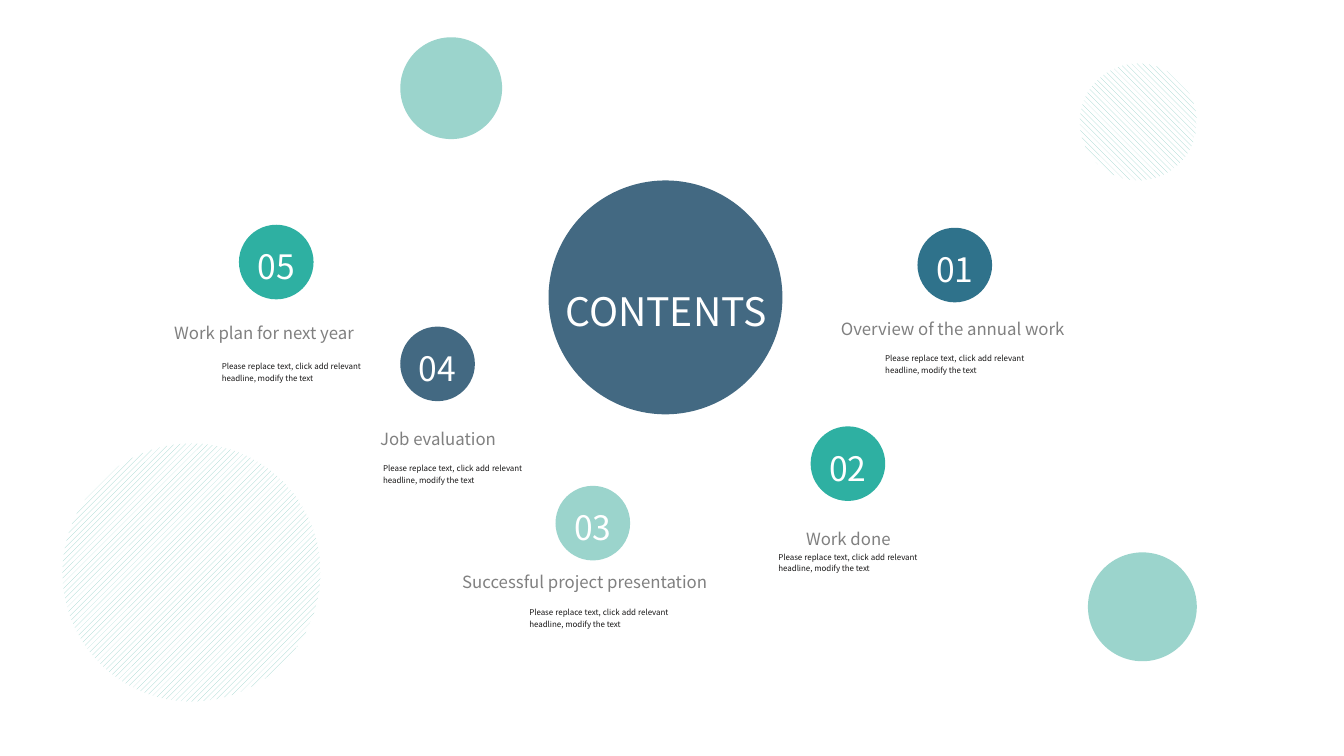
from pptx import Presentation
from pptx.dml.color import RGBColor
from pptx.enum.dml import MSO_PATTERN
from pptx.enum.shapes import MSO_SHAPE
from pptx.enum.text import MSO_ANCHOR, MSO_AUTO_SIZE, PP_ALIGN
from pptx.util import Inches, Pt

OVAL = MSO_SHAPE.OVAL
RISING = MSO_PATTERN.WIDE_UPWARD_DIAGONAL
FALLING = MSO_PATTERN.WIDE_DOWNWARD_DIAGONAL
TOP, MIDDLE = MSO_ANCHOR.TOP, MSO_ANCHOR.MIDDLE
CENTER, JUSTIFY = PP_ALIGN.CENTER, PP_ALIGN.JUSTIFY
GROW = MSO_AUTO_SIZE.SHAPE_TO_FIT_TEXT

NAVY = RGBColor(0x43, 0x69, 0x82)
BLUE = RGBColor(0x2F, 0x72, 0x8B)
TEAL = RGBColor(0x2E, 0xB0, 0xA2)
MINT = RGBColor(0x9B, 0xD4, 0xCC)
WHITE = RGBColor(0xFF, 0xFF, 0xFF)
GRAY = RGBColor(0x80, 0x80, 0x80)
INK = RGBColor(0x18, 0x17, 0x17)
FONT = "Noto Sans CJK SC"

# Content: lengths in inches
TITLE = "CONTENTS"
NOTE = "Please replace text, click add relevant headline, modify the text"
BADGE = 0.74
NOTE_SIZE = (1.38, 0.22)
HEADING_HEIGHT = 0.24
# number, colour, badge corner, heading, (left, top, width), note corner
TOPICS = [
    ("01", BLUE, (9.1, 2.26), "Overview of the annual work", (8.19, 3.12, 2.52), (8.78, 3.49)),
    ("02", TEAL, (8.04, 4.23), "Work done", (7.81, 5.21, 1.21), (7.72, 5.46)),
    ("03", MINT, (5.51, 4.82), "Successful project presentation", (4.49, 5.63, 2.62), (5.25, 6.01)),
    ("04", NAVY, (3.97, 3.24), "Job evaluation", (3.74, 4.21, 1.21), (3.8, 4.58)),
    ("05", TEAL, (2.37, 2.23), "Work plan for next year", (1.51, 3.16, 2.22), (2.2, 3.57)),
]
# left, top, diameter, hatching
BUBBLES = [
    (10.79, 5.48, 1.08, None),
    (3.97, 0.37, 1.01, None),
    (0.62, 4.4, 2.56, RISING),
    (10.71, 0.63, 1.16, FALLING),
]

deck = Presentation()
deck.slide_width, deck.slide_height = Inches(13.33), Inches(7.5)
page = deck.slides.add_slide(deck.slide_layouts[6])


def add_circle(left, top, diameter, color, hatching=None):
    circle = page.shapes.add_shape(
        OVAL, Inches(left), Inches(top), Inches(diameter), Inches(diameter))
    circle.shadow.inherit = False
    circle.line.fill.background()
    if hatching is None:
        circle.fill.solid()
        circle.fill.fore_color.rgb = color
    else:
        circle.fill.patterned()
        circle.fill.pattern = hatching
        circle.fill.fore_color.rgb = color
        circle.fill.back_color.rgb = WHITE
    return circle


def write(shape, text, size, color, align=CENTER, anchor=MIDDLE, wrap=True, spacing=1.2):
    frame = shape.text_frame
    frame.margin_left = frame.margin_right = frame.margin_top = frame.margin_bottom = 0
    frame.word_wrap = wrap
    frame.vertical_anchor = anchor
    para = frame.paragraphs[0]
    para.text = text
    para.alignment = align
    para.line_spacing = spacing
    para.font.name, para.font.size = FONT, Pt(size)
    para.font.color.rgb = color


def add_label(left, top, width, height, text, size, color, **style):
    box = page.shapes.add_textbox(Inches(left), Inches(top), Inches(width), Inches(height))
    write(box, text, size, color, **style)
    box.text_frame.auto_size = GROW


# Central title
add_circle(5.44, 1.79, 2.32, NAVY)
add_label(5.45, 2.8, 2.31, 0.57, TITLE, 28, WHITE, wrap=False, spacing=1.0)

# Numbered topics
for number, color, badge_corner, heading, heading_place, note_corner in TOPICS:
    badge = add_circle(*badge_corner, BADGE, color)
    write(badge, number, 24, WHITE, wrap=False)
    add_label(*heading_place, HEADING_HEIGHT, heading, 12, GRAY)
    add_label(*note_corner, *NOTE_SIZE, NOTE, 5.7, INK, align=JUSTIFY, anchor=TOP)

# Decorative bubbles
for left, top, diameter, hatching in BUBBLES:
    add_circle(left, top, diameter, MINT, hatching)

deck.save("out.pptx")
